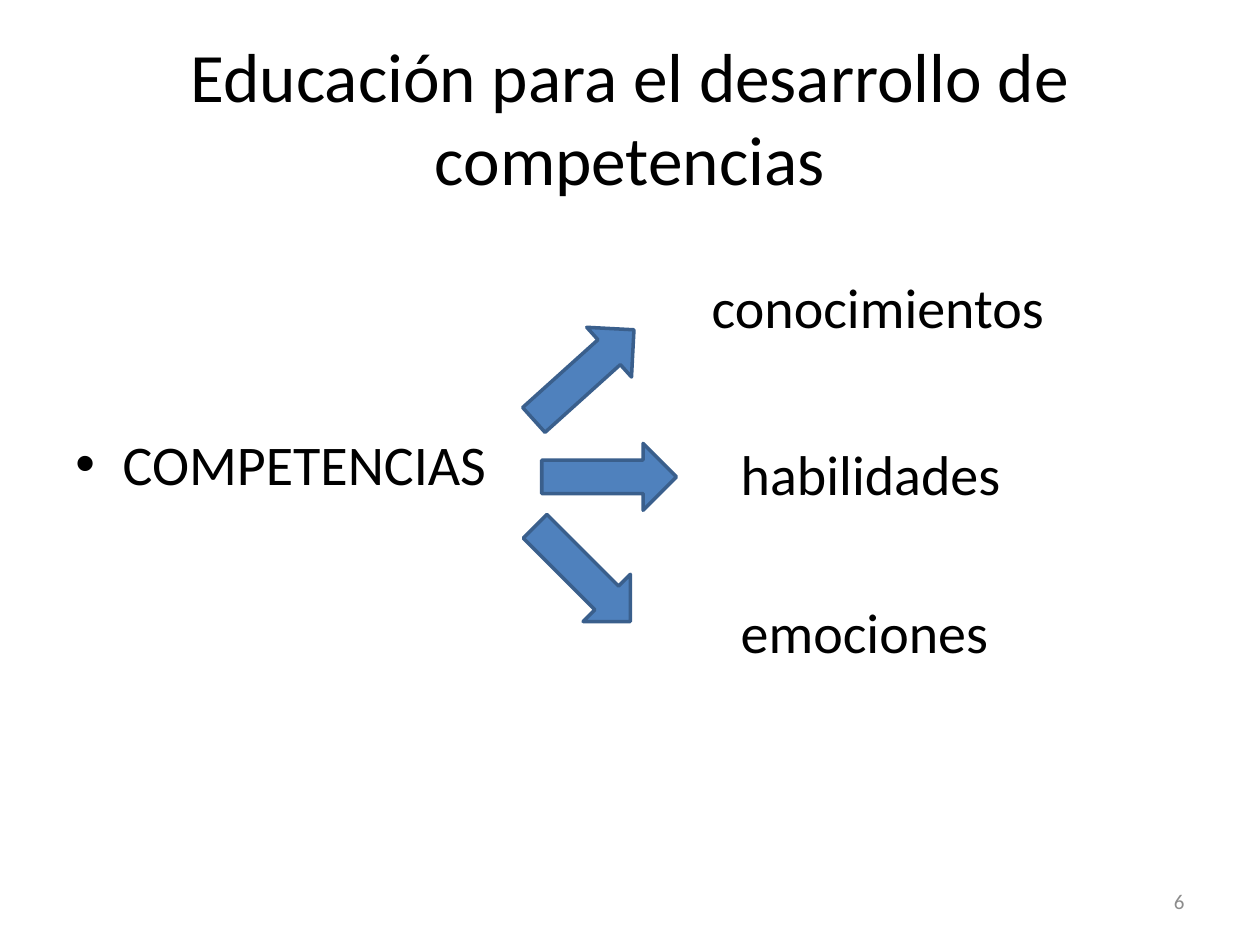
from dataclasses import dataclass

import pptx
import pptx.dml.color
import pptx.enum.shapes
import pptx.enum.text
import pptx.oxml.ns
import pptx.util
from lxml import etree

Pt = pptx.util.Pt
RGBColor = pptx.dml.color.RGBColor
Align = pptx.enum.text.PP_ALIGN
Anchor = pptx.enum.text.MSO_ANCHOR

BLACK = RGBColor(0x00, 0x00, 0x00)
GREY = RGBColor(0x8C, 0x8C, 0x8C)
BLUE = RGBColor(0x4F, 0x81, 0xBD)
DARK_BLUE = RGBColor(0x3A, 0x5F, 0x8C)

FONT = "Calibri"
ARROW_WIDTH, ARROW_HEIGHT = 77, 38.2
BULLET_INDENT = 27


@dataclass
class Label:
    text: str
    left: float
    top: float
    width: float = 208
    height: float = 46
    size: float = 32
    color: RGBColor = BLACK
    align: Align = Align.LEFT
    anchor: Anchor = Anchor.TOP


@dataclass
class Arrow:
    left: float
    top: float
    rotation: float = 0


TITLE = Label("Educación para el desarrollo de competencias", 36, 21.6, 648, 90,
              39.6, align=Align.CENTER, anchor=Anchor.MIDDLE)
SUBJECT = Label("COMPETENCIAS", 36, 242, 270)
PAGE_NUMBER = Label("6", 516, 500.5, 168, 28.8, 12, GREY, Align.RIGHT, Anchor.MIDDLE)
OUTCOMES = [
    Label("conocimientos", 399.6, 152),
    Label("habilidades", 416.2, 247.7),
    Label("emociones", 416.2, 337.7),
]
ARROWS = [Arrow(295.2, 195.1, 318), Arrow(309.6, 253.4), Arrow(294.5, 308.9, 45)]


def write_label(box, label: Label):
    """Place the box and write the label's text in it; return the paragraph."""
    box.left, box.top = Pt(label.left), Pt(label.top)
    box.width, box.height = Pt(label.width), Pt(label.height)
    frame = box.text_frame
    frame.word_wrap = True
    frame.auto_size = pptx.enum.text.MSO_AUTO_SIZE.NONE
    frame.vertical_anchor = label.anchor
    para = frame.paragraphs[0]
    para.alignment = label.align
    span = para.add_run()
    span.text = label.text
    span.font.name = FONT
    span.font.size = Pt(label.size)
    span.font.color.rgb = label.color
    return para


def add_label(page, label: Label):
    box = page.shapes.add_textbox(Pt(0), Pt(0), Pt(label.width), Pt(label.height))
    return write_label(box, label)


def add_bullet(para) -> None:
    properties = para._p.get_or_add_pPr()
    properties.set("marL", str(Pt(BULLET_INDENT)))
    properties.set("indent", str(-Pt(BULLET_INDENT)))
    font = etree.SubElement(properties, pptx.oxml.ns.qn("a:buFont"))
    font.set("typeface", "Arial")
    bullet = etree.SubElement(properties, pptx.oxml.ns.qn("a:buChar"))
    bullet.set("char", "•")


def add_arrow(page, arrow: Arrow) -> None:
    shape = page.shapes.add_shape(
        pptx.enum.shapes.MSO_SHAPE.RIGHT_ARROW,
        Pt(arrow.left), Pt(arrow.top), Pt(ARROW_WIDTH), Pt(ARROW_HEIGHT))
    shape.rotation = arrow.rotation
    shape.shadow.inherit = False
    shape.fill.solid()
    shape.fill.fore_color.rgb = BLUE
    shape.line.color.rgb = DARK_BLUE
    shape.line.width = Pt(2)


def main() -> None:
    deck = pptx.Presentation()
    deck.slide_width, deck.slide_height = Pt(720), Pt(540)
    page = deck.slides.add_slide(deck.slide_layouts[5])
    write_label(page.shapes.title, TITLE)
    add_bullet(add_label(page, SUBJECT))
    add_label(page, PAGE_NUMBER)
    for arrow in ARROWS:
        add_arrow(page, arrow)
    for outcome in OUTCOMES:
        add_label(page, outcome)
    deck.save("out.pptx")


if __name__ == "__main__":
    main()
